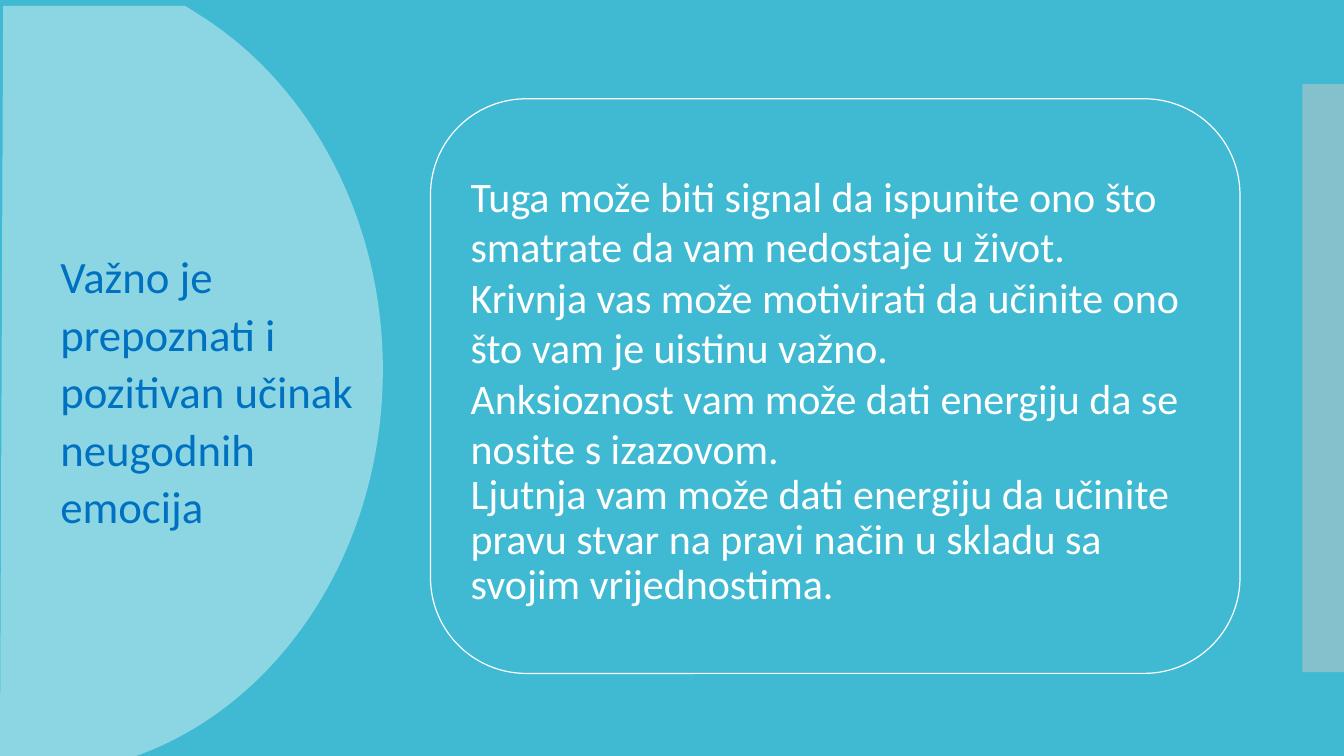
from pptx import Presentation
from pptx.dml.color import RGBColor
from pptx.enum.shapes import MSO_SHAPE
from pptx.enum.text import MSO_ANCHOR, MSO_AUTO_SIZE, PP_ALIGN
from pptx.oxml.ns import qn
from pptx.util import Cm, Pt

TITLE = "Važno je prepoznati i pozitivan učinak neugodnih emocija"
EMOTIONS = [
    # text, line spacing
    ("Tuga može biti signal da ispunite ono što smatrate da vam nedostaje u život.", 1.0),
    ("Krivnja vas može motivirati da učinite ono što vam je uistinu važno.", 1.0),
    ("Anksioznost vam može dati energiju da se nosite s izazovom.", 1.0),
    ("Ljutnja vam može dati energiju da učinite pravu stvar na pravi način "
     "u skladu sa svojim vrijednostima.", 0.9),
]

FONT = "Calibri"
TURQUOISE = RGBColor(0x40, 0xBA, 0xD2)
PALE_TURQUOISE = RGBColor(0x8C, 0xD6, 0xE4)
GREY = RGBColor(0xC8, 0xC8, 0xC8)
BLUE = RGBColor(0x00, 0x70, 0xC0)
WHITE = RGBColor(0xFF, 0xFF, 0xFF)

# Left, top, width, height in centimetres
SIDE_BAR = (32.82, 2.12, 1.05, 14.82)
FRAME = (10.85, 2.49, 20.4, 14.48)
TITLE_BOX = (0, 0.15, 9.65, 19.3)
BODY_BOX = (11.56, 3.29, 19, 13.06)

# Outline of the large disc, in centimetres
DISC_CORNERS = [(4.67, 0.15), (0.08, 0.15), (0, 19.2), (2.9, 19.23), (2.97, 19.2)]
DISC_CURVES = [
    [(2.97, 19.2), (6.83, 18.08), (9.65, 14.07), (9.65, 9.32)],
    [(9.65, 9.32), (9.65, 5.46), (7.77, 2.08), (5, 0.36)],
]
CURVE_STEPS = 40


def bezier_point(points, t):
    weights = ((1 - t) ** 3, 3 * t * (1 - t) ** 2, 3 * t ** 2 * (1 - t), t ** 3)
    return tuple(sum(w * point[axis] for w, point in zip(weights, points))
                 for axis in (0, 1))


def paint(shape, color, line_color=None):
    shape.shadow.inherit = False
    shape.fill.solid()
    shape.fill.fore_color.rgb = color
    if line_color is None:
        shape.line.fill.background()
    else:
        shape.line.color.rgb = line_color
        shape.line.width = Pt(0.85)


def add_box(slide, kind, box, color, line_color=None):
    shape = slide.shapes.add_shape(kind, *map(Cm, box))
    paint(shape, color, line_color)
    return shape


def add_disc(slide):
    outline = DISC_CORNERS + [
        bezier_point(curve, step / CURVE_STEPS)
        for curve in DISC_CURVES for step in range(1, CURVE_STEPS + 1)]
    start, *others = [(Cm(x), Cm(y)) for x, y in outline]
    builder = slide.shapes.build_freeform(*start)
    builder.add_line_segments(others, close=True)
    paint(builder.convert_to_shape(), PALE_TURQUOISE)


def place_text(slide, placeholder, box, margins):
    """Move a placeholder in front of the shapes and set up its text frame."""
    placeholder.left, placeholder.top, placeholder.width, placeholder.height = map(Cm, box)
    slide.shapes._spTree.append(placeholder._element)
    frame = placeholder.text_frame
    frame.word_wrap = True
    frame.auto_size = MSO_AUTO_SIZE.NONE
    frame.vertical_anchor = MSO_ANCHOR.MIDDLE
    (frame.margin_left, frame.margin_top,
     frame.margin_right, frame.margin_bottom) = map(Cm, margins)
    return frame


def format_paragraph(paragraph, size, color, spacing):
    paragraph.alignment = PP_ALIGN.LEFT
    paragraph.line_spacing = spacing
    paragraph.space_before = paragraph.space_after = Pt(0)
    for run in paragraph.runs:
        run.font.name = FONT
        run.font.size = Pt(size)
        run.font.color.rgb = color


def remove_bullet(paragraph):
    properties = paragraph._p.get_or_add_pPr()
    properties.set("marL", "0")
    properties.set("indent", "0")
    properties.append(properties.makeelement(qn("a:buNone"), {}))


def main():
    presentation = Presentation()
    presentation.slide_width, presentation.slide_height = Cm(33.87), Cm(19.05)
    slide = presentation.slides.add_slide(presentation.slide_layouts[1])
    slide.background.fill.solid()
    slide.background.fill.fore_color.rgb = TURQUOISE

    side_bar = add_box(slide, MSO_SHAPE.RECTANGLE, SIDE_BAR, GREY)
    bar_color = side_bar._element.spPr.find(qn("a:solidFill"))[0]
    bar_color.append(bar_color.makeelement(qn("a:alpha"), {"val": "50000"}))
    add_disc(slide)
    add_box(slide, MSO_SHAPE.ROUNDED_RECTANGLE, FRAME, TURQUOISE, WHITE)

    title, body = slide.placeholders
    title_frame = place_text(slide, title, TITLE_BOX, (1.52, 0.13, 0.25, 0.13))
    title_frame.text = TITLE
    format_paragraph(title_frame.paragraphs[0], 32, BLUE, 1.07)

    body_frame = place_text(slide, body, BODY_BOX, (0.3, 0.3, 0.3, 0.3))
    body_frame.text = "\n".join(text for text, _ in EMOTIONS)
    for paragraph, (_, spacing) in zip(body_frame.paragraphs, EMOTIONS):
        format_paragraph(paragraph, 30, WHITE, spacing)
        remove_bullet(paragraph)

    presentation.save("out.pptx")


if __name__ == "__main__":
    main()
